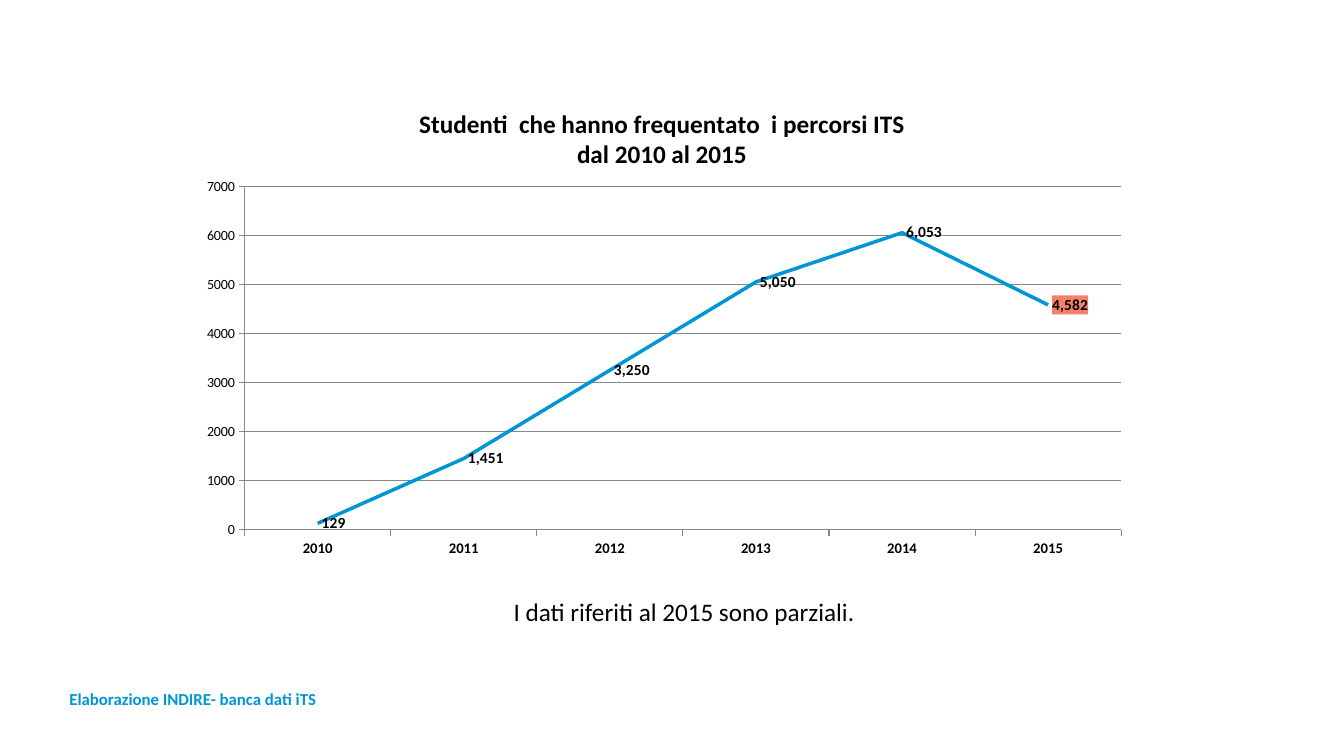
from dataclasses import dataclass
from typing import Any

from lxml import etree
from pptx import Presentation
from pptx.chart.data import CategoryChartData
from pptx.dml.color import RGBColor
from pptx.enum.chart import XL_CHART_TYPE, XL_LABEL_POSITION, XL_MARKER_STYLE, XL_TICK_MARK
from pptx.enum.text import MSO_ANCHOR, PP_ALIGN
from pptx.oxml import parse_xml
from pptx.oxml.ns import nsdecls, qn
from pptx.util import Inches, Pt

LINE = XL_CHART_TYPE.LINE
LABEL_RIGHT = XL_LABEL_POSITION.RIGHT
NO_MARKER = XL_MARKER_STYLE.NONE
TICK_OUT, TICK_NONE = XL_TICK_MARK.OUTSIDE, XL_TICK_MARK.NONE
TOP, MIDDLE = MSO_ANCHOR.TOP, MSO_ANCHOR.MIDDLE
LEFT, CENTER = PP_ALIGN.LEFT, PP_ALIGN.CENTER


@dataclass(frozen=True)
class Theme:
    font: str = "Calibri"
    ink: str = "000000"
    blue: str = "0096D6"
    rule: str = "878787"
    partial: str = "F4806A"
    heading: float = 18
    source: float = 12
    value_label: float = 11
    year: float = 10.5
    scale: float = 10


@dataclass(frozen=True)
class Caption:
    text: str
    box: tuple[float, float, float, float]
    size: float
    color: str
    bold: bool
    align: Any
    anchor: Any
    insets: tuple[float, float]
    spacing: float


THEME = Theme()
STUDENTS = {"2010": 129, "2011": 1451, "2012": 3250, "2013": 5050, "2014": 6053, "2015": 4582}
PARTIAL_YEAR = "2015"
TITLE_LINES = ("Studenti  che hanno frequentato  i percorsi ITS", "dal 2010 al 2015")
CAPTIONS = (
    Caption("I dati riferiti al 2015 sono parziali.", (2.81, 5.95, 7.95, 0.79),
            THEME.heading, THEME.ink, False, CENTER, TOP, (0, 0), 0.9),
    Caption("Elaborazione INDIRE- banca dati iTS", (0.59, 6.74, 9, 0.39),
            THEME.source, THEME.blue, True, LEFT, MIDDLE, (0.1, 0.05), 1.0),
)


def apply(target: Any, values: dict[str, Any]) -> None:
    for name, value in values.items():
        setattr(target, name, value)


def style_font(font: Any, size: float, bold: bool = False, color: str = THEME.ink) -> None:
    apply(font, {"name": THEME.font, "size": Pt(size), "bold": bold})
    font.color.rgb = RGBColor.from_string(color)


def style_line(line: Any, color: str, width: float) -> None:
    line.color.rgb = RGBColor.from_string(color)
    line.width = Pt(width)


def place(parent: Any, index: int, **fractions: float) -> None:
    for old in parent.findall(qn("c:layout")):
        parent.remove(old)
    layout = etree.Element(qn("c:layout"))
    manual = etree.SubElement(layout, qn("c:manualLayout"))
    modes = {"xMode": "edge", "yMode": "edge"}
    if "w" in fractions:
        modes = {"layoutTarget": "inner", **modes}
    for tag, value in {**modes, **fractions}.items():
        etree.SubElement(manual, qn(f"c:{tag}")).set("val", str(value))
    parent.insert(index, layout)


def add_caption(slide: Any, caption: Caption) -> None:
    frame = slide.shapes.add_textbox(*map(Inches, caption.box)).text_frame
    side, edge = map(Inches, caption.insets)
    apply(frame, {"word_wrap": True, "vertical_anchor": caption.anchor,
                  "margin_left": side, "margin_right": side,
                  "margin_top": edge, "margin_bottom": edge})
    paragraph = frame.paragraphs[0]
    apply(paragraph, {"alignment": caption.align, "line_spacing": caption.spacing})
    run = paragraph.add_run()
    run.text = caption.text
    style_font(run.font, caption.size, caption.bold, caption.color)


def add_title(chart: Any) -> None:
    frame = chart.chart_title.text_frame
    for index, text in enumerate(TITLE_LINES):
        paragraph = frame.add_paragraph() if index else frame.paragraphs[0]
        paragraph.alignment = CENTER
        run = paragraph.add_run()
        run.text = text
        style_font(run.font, THEME.heading, True)
    chart.chart_title.include_in_layout = False
    place(chart.chart_title._element, 1, x=0.24, y=0.04)


def style_axes(chart: Any) -> None:
    years, scale = chart.category_axis, chart.value_axis
    for axis, size, bold in ((years, THEME.year, True), (scale, THEME.scale, False)):
        apply(axis, {"major_tick_mark": TICK_OUT, "minor_tick_mark": TICK_NONE})
        style_font(axis.tick_labels.font, size, bold)
        style_line(axis.format.line, THEME.rule, 0.75)
    apply(scale, {"minimum_scale": 0, "maximum_scale": 7000, "major_unit": 1000,
                  "has_major_gridlines": True})
    apply(scale.tick_labels, {"number_format": "0", "number_format_is_linked": False})
    style_line(scale.major_gridlines.format.line, THEME.rule, 0.75)


def style_series(series: Any) -> None:
    series.smooth = False
    series.marker.style = NO_MARKER
    style_line(series.format.line, THEME.blue, 2.5)
    labels = series.data_labels
    apply(labels, {"show_value": True, "position": LABEL_RIGHT,
                   "number_format": "#,##0", "number_format_is_linked": False})
    style_font(labels.font, THEME.value_label, True)
    partial = series.points[list(STUDENTS).index(PARTIAL_YEAR)].data_label
    partial.position = LABEL_RIGHT
    style_font(partial.font, THEME.value_label, True)
    fill = parse_xml(
        f'<c:spPr {nsdecls("c", "a")}><a:solidFill>'
        f'<a:srgbClr val="{THEME.partial}"/></a:solidFill></c:spPr>')
    label = labels._element.find(qn("c:dLbl"))
    label.find(qn("c:txPr")).addprevious(fill)


def add_student_chart(slide: Any) -> None:
    data = CategoryChartData(number_format="#,##0")
    data.categories = list(STUDENTS)
    data.add_series("Series 1", list(STUDENTS.values()))
    box = map(Inches, (1.86, 0.84, 9.45, 4.8))
    chart = slide.shapes.add_chart(LINE, *box, data).chart
    chart.has_legend = False
    style_font(chart.font, THEME.scale)
    chart.plots[0].vary_by_categories = False
    add_title(chart)
    style_axes(chart)
    style_series(chart.plots[0].series[0])
    plot_area = chart._chartSpace.find(f'{qn("c:chart")}/{qn("c:plotArea")}')
    place(plot_area, 0, x=0.06, y=0.21, w=0.92, h=0.71)


def main() -> None:
    deck = Presentation()
    apply(deck, {"slide_width": Inches(13.33), "slide_height": Inches(7.5)})
    slide = deck.slides.add_slide(deck.slide_layouts[6])
    add_student_chart(slide)
    for caption in CAPTIONS:
        add_caption(slide, caption)
    deck.save("out.pptx")


if __name__ == "__main__":
    main()
